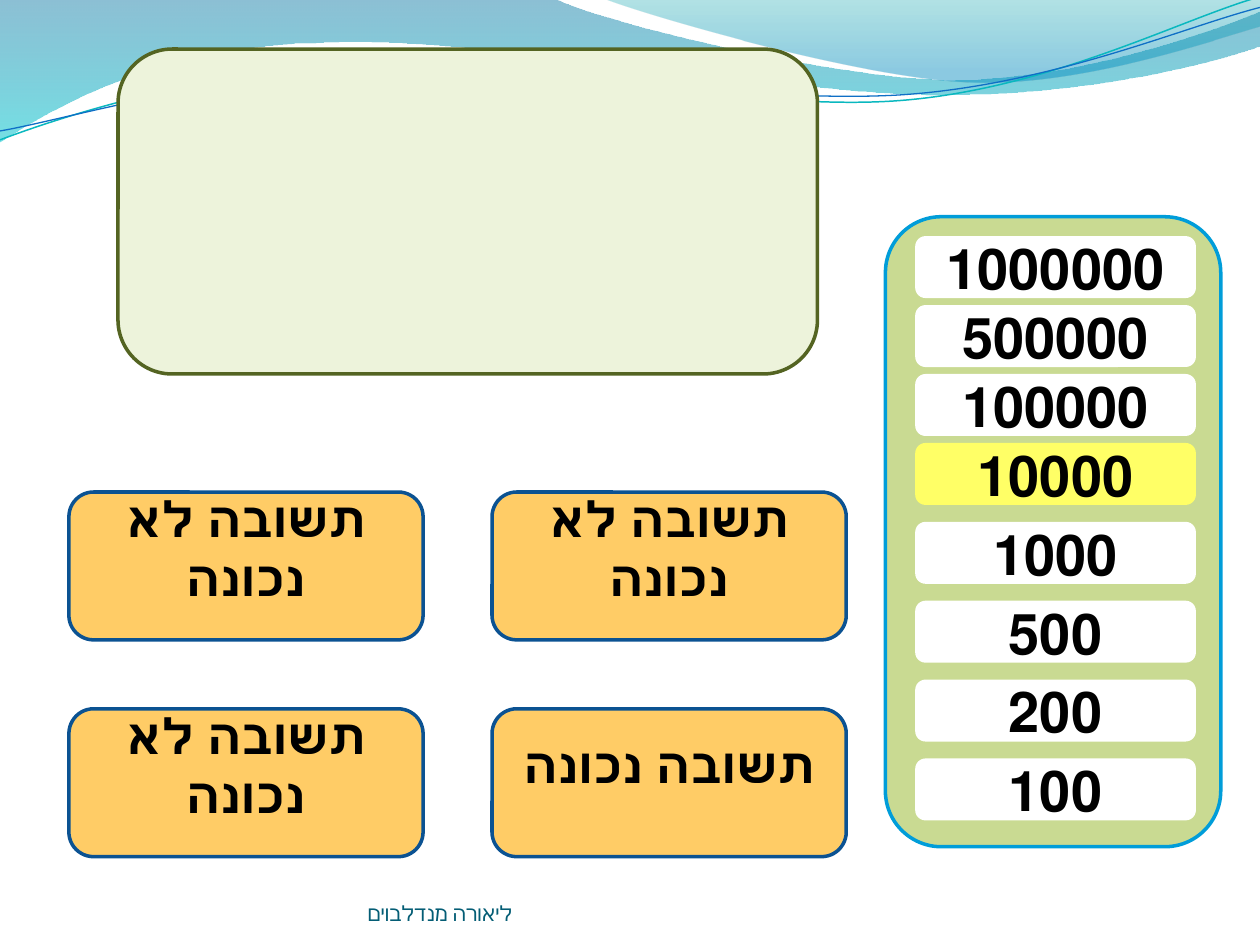
from math import cos, radians, sin

from pptx import Presentation
from pptx.dml.color import RGBColor
from pptx.enum.shapes import MSO_SHAPE
from pptx.enum.text import MSO_ANCHOR, PP_ALIGN
from pptx.oxml.ns import qn
from pptx.util import Cm, Pt

ROUNDED = MSO_SHAPE.ROUNDED_RECTANGLE
ALTERNATE = MSO_SHAPE.FLOWCHART_ALTERNATE_PROCESS
MIDDLE, BOTTOM = MSO_ANCHOR.MIDDLE, MSO_ANCHOR.BOTTOM
CENTER, LEFT = PP_ALIGN.CENTER, PP_ALIGN.LEFT
FONT = "Cambria"

COLORS = {
    "text": "000000", "footer": "045D75",
    "answer": "FFCC66", "answer_edge": "0B5292",
    "question": "EDF3DB", "question_edge": "546422",
    "ladder": "C9DA92", "ladder_edge": "009DD9",
    "prize": "FFFFFF", "current_prize": "FFFF66",
    "teal_line": "0AB8BF", "blue_line": "0F6FC6",
    "deep_blue": "0074A1", "aqua": "00C6CF",
    "teal": "00A1A9", "sky": "008BBF",
}

ANSWERS = [["תשובה לא נכונה", "תשובה לא נכונה"],
           ["תשובה לא נכונה", "תשובה נכונה"]]
PRIZES = ["1000000", "500000", "100000", "10000", "1000", "500", "200", "100"]
CURRENT_PRIZE = "10000"
FOOTER = "ליאורה מנדלבוים"

# Each wave: start point, then segments of one point (line) or three (curve), in cm.
WAVES = [
    ((0, -0.03), [
        [(11.18, -0.03)],
        [(12.09, 0.43), (16.87, 1.6), (19.25, 1.6)],
        [(21.67, 1.6), (24.33, 0.66), (25.4, 0.23)],
        [(25.43, 0.91)],
        [(24.97, 1.12), (22.1, 1.93), (18.95, 1.91)],
        [(15.8, 1.91), (9.7, 0.71), (6.53, 0.86)],
        [(3.28, 0.89), (1.17, 2.11), (-0.03, 2.87)],
    ], [(0, "deep_blue", 45), (1, "aqua", 55)]),
    ((12.17, -0.03), [
        [(12.93, 0.28), (17.32, 1.57), (19.53, 1.65)],
        [(21.74, 1.75), (24.41, 0.81), (25.4, 0.53)],
        [(25.4, 0)],
    ], [(0, "teal", 30), (0.8, "sky", 45)]),
]
WAVE_LINES = [
    ((0, 2.82), [
        [(1.22, 2.36), (4.01, 1.45), (7.04, 1.32)],
        [(10.03, 1.19), (15.06, 2.26), (18.11, 2.03)],
        [(21.16, 1.8), (23.83, 0.38), (25.35, -0.05)],
    ], "teal_line", 0.85),
    ((0, 2.64), [
        [(1.19, 2.44), (4.17, 1.55), (7.19, 1.42)],
        [(10.24, 1.3), (15.16, 2.11), (18.21, 1.91)],
        [(21.23, 1.7), (23.9, 0.53), (25.4, 0.15)],
    ], "blue_line", 0.75),
]
LINE_TILT = -2.7
TILT_CENTER = (12.68, 1.48)


def rgb(name):
    return RGBColor.from_string(COLORS[name])


def untilt(point):
    angle = radians(-LINE_TILT)
    dx, dy = (value - middle for value, middle in zip(point, TILT_CENTER))
    return (TILT_CENTER[0] + dx * cos(angle) - dy * sin(angle),
            TILT_CENTER[1] + dx * sin(angle) + dy * cos(angle))


def add_outline(slide, start, segments, close):
    points = [(Cm(x), Cm(y)) for x, y in [start, *sum(segments, [])]]
    builder = slide.shapes.build_freeform(*points[0])
    builder.add_line_segments(points[1:], close=close)
    outline = builder.convert_to_shape()
    outline.shadow.inherit = False
    steps = iter(list(outline._element.spPr.iter(qn("a:lnTo"))))
    for segment in segments:
        corners = [next(steps) for _ in segment]
        if len(corners) == 3:
            curve = corners[0].makeelement(qn("a:cubicBezTo"), {})
            corners[0].addprevious(curve)
            for corner in corners:
                curve.append(corner[0])
                corner.getparent().remove(corner)
    return outline


def add_wave(slide, start, segments, stops):
    wave = add_outline(slide, start, segments, True)
    wave.line.fill.background()
    wave.fill.gradient()
    wave.fill.gradient_angle = 270
    for stop, (position, color, _) in zip(wave.fill.gradient_stops, stops):
        stop.position = position
        stop.color.rgb = rgb(color)
    for tint, (_, _, opacity) in zip(wave._element.spPr.iter(qn("a:srgbClr")), stops):
        tint.append(tint.makeelement(qn("a:alpha"), {"val": str(opacity * 1000)}))


def add_wave_line(slide, start, segments, color, width):
    level = [[untilt(point) for point in segment] for segment in segments]
    wave_line = add_outline(slide, untilt(start), level, False)
    wave_line.rotation = LINE_TILT
    wave_line.fill.background()
    wave_line.line.color.rgb = rgb(color)
    wave_line.line.width = Pt(width)


def add_panel(slide, preset, box, fill, edge=None):
    panel = slide.shapes.add_shape(preset, *map(Cm, box))
    panel.shadow.inherit = False
    panel.fill.solid()
    panel.fill.fore_color.rgb = rgb(fill)
    if edge:
        panel.line.color.rgb = rgb(edge)
        panel.line.width = Pt(2)
    else:
        panel.line.fill.background()
    return panel


def write(holder, words, size, color="text", bold=True, align=CENTER, anchor=MIDDLE):
    frame = holder.text_frame
    frame.word_wrap = True
    frame.vertical_anchor = anchor
    paragraph = frame.paragraphs[0]
    paragraph.alignment = align
    paragraph._p.get_or_add_pPr().set("rtl", "1")
    run = paragraph.add_run()
    run.text = words
    run.font.name = FONT
    run.font.size = Pt(size)
    run.font.bold = bold
    run.font.color.rgb = rgb(color)
    return frame


def main():
    deck = Presentation()
    deck.slide_width, deck.slide_height = Cm(25.4), Cm(19.05)
    slide = deck.slides.add_slide(deck.slide_layouts[6])

    for wave in WAVES:
        add_wave(slide, *wave)
    for wave_line in WAVE_LINES:
        add_wave_line(slide, *wave_line)

    add_panel(slide, ALTERNATE, (2.38, 0.99, 14.1, 6.55), "question", "question_edge")

    for row, answers in enumerate(ANSWERS):
        for column, words in enumerate(answers):
            box = (1.39 + 8.53 * column, 9.92 + 4.37 * row, 7.14, 2.98)
            answer = add_panel(slide, ROUNDED, box, "answer", "answer_edge")
            write(answer, words, 28).margin_bottom = Cm(0.87)

    add_panel(slide, ROUNDED, (17.85, 4.37, 6.76, 12.7), "ladder", "ladder_edge")
    current = PRIZES.index(CURRENT_PRIZE)
    for rank, amount in enumerate(PRIZES):
        top = 4.76 + 1.39 * min(rank, current) + 1.59 * max(rank - current, 0)
        fill = "current_prize" if rank == current else "prize"
        prize = add_panel(slide, ROUNDED, (18.45, top, 5.66, 1.25), fill)
        write(prize, amount, 32)

    footer = slide.shapes.add_textbox(Cm(7.41), Cm(17.65), Cm(9.32), Cm(1.02))
    frame = write(footer, FOOTER, 12, "footer", False, LEFT, BOTTOM)
    frame.margin_left = frame.margin_right = frame.margin_top = frame.margin_bottom = 0

    deck.save("out.pptx")


if __name__ == "__main__":
    main()
